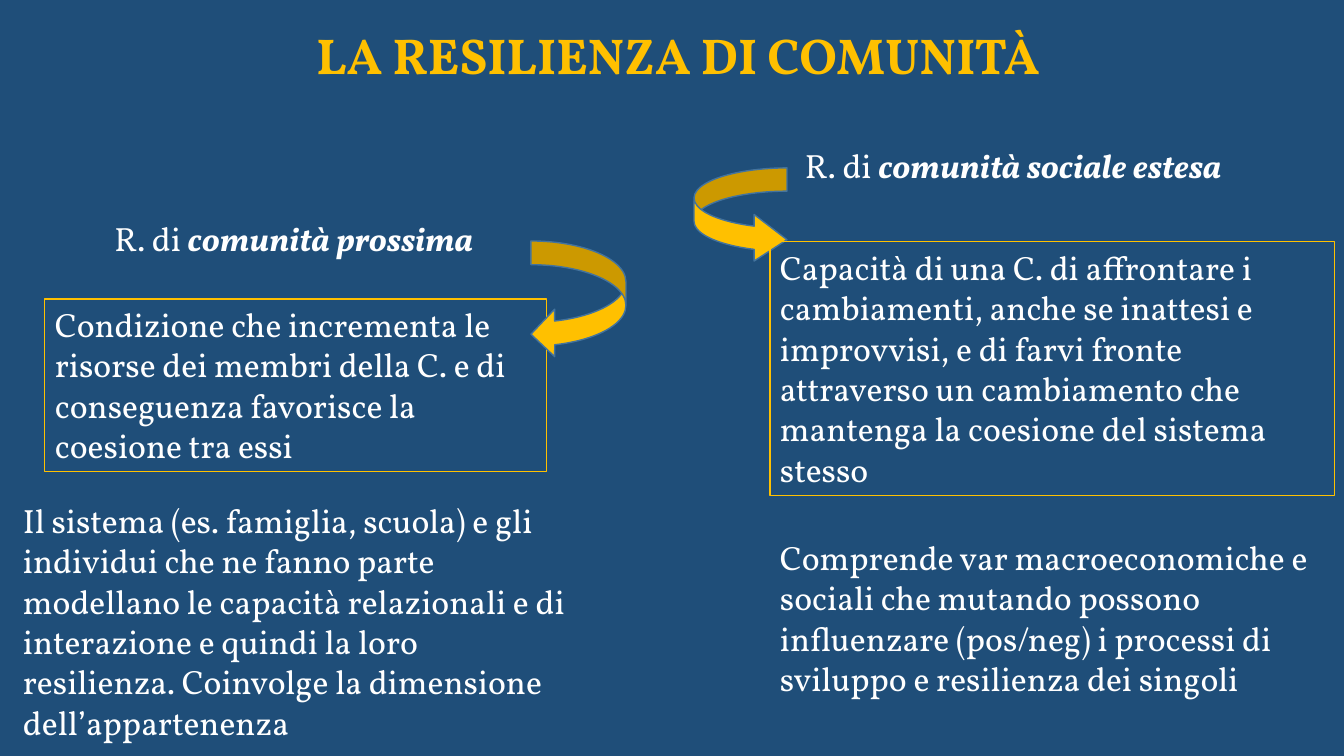
import pptx
import pptx.util
import pptx.dml.color
import pptx.enum.shapes
import pptx.enum.text

EMU_PER_PX = 914400 / 100.8
GOLD, WHITE, NAVY, STEEL = "FFC000", "FFFFFF", "1F4E79", "43739E"
SHAPES = pptx.enum.shapes.MSO_SHAPE
ALIGN = pptx.enum.text.PP_ALIGN


def px(length):
    return pptx.util.Emu(round(length * EMU_PER_PX))


def rgb(hex_colour):
    return pptx.dml.color.RGBColor.from_string(hex_colour)


def write(paragraph, text, size=24, colour=WHITE, bold=False, italic=False):
    run = paragraph.add_run()
    run.text = text
    run.font.name = "Vollkorn"
    run.font.size = pptx.util.Pt(size)
    run.font.color.rgb = rgb(colour)
    run.font.bold = bold
    run.font.italic = italic


class ResilienceSlide:
    def __init__(self, deck):
        title_only = deck.slide_layouts[5]
        self.slide = deck.slides.add_slide(title_only)
        background = self.slide.background.fill
        background.solid()
        background.fore_color.rgb = rgb(NAVY)

    def paragraph(self, holder, align):
        """Fit the holder to wrapped, top-anchored text and return its paragraph."""
        frame = holder.text_frame
        frame.word_wrap = True
        frame.auto_size = pptx.enum.text.MSO_AUTO_SIZE.SHAPE_TO_FIT_TEXT
        frame.vertical_anchor = pptx.enum.text.MSO_ANCHOR.TOP
        frame.paragraphs[0].alignment = align
        return frame.paragraphs[0]

    def title(self, text, left, top, width, height):
        heading = self.slide.shapes.title
        heading.left, heading.top = px(left), px(top)
        heading.width, heading.height = px(width), px(height)
        write(self.paragraph(heading, ALIGN.CENTER), text,
              size=36, colour=GOLD, bold=True)

    def text(self, content, area, emphasis="", align=ALIGN.LEFT):
        label = self.slide.shapes.add_textbox(*map(px, area))
        paragraph = self.paragraph(label, align)
        write(paragraph, content)
        if emphasis:
            write(paragraph, emphasis, bold=True, italic=True)

    def shape(self, preset, area, line, line_width):
        shape = self.slide.shapes.add_shape(preset, *map(px, area))
        shape.shadow.inherit = False
        shape.line.color.rgb = rgb(line)
        shape.line.width = pptx.util.Pt(line_width)
        return shape

    def definition(self, content, area):
        frame = self.shape(SHAPES.RECTANGLE, area, GOLD, 0.75)
        frame.fill.background()
        write(self.paragraph(frame, ALIGN.LEFT), content)

    def arrow(self, preset, area, head_length=0.25):
        arrow = self.shape(preset, area, STEEL, 1)
        arrow.fill.solid()
        arrow.fill.fore_color.rgb = rgb(GOLD)
        arrow.adjustments[2] = head_length


def main():
    deck = pptx.Presentation()
    deck.slide_width, deck.slide_height = px(1344), px(756)
    page = ResilienceSlide(deck)

    page.arrow(SHAPES.CURVED_RIGHT_ARROW, (694, 168, 93, 95), head_length=0.353)
    page.title("LA RESILIENZA DI COMUNITÀ", 167, 19, 1022, 72)

    page.text("R. di ", (67, 213, 460, 50),
              emphasis="comunità prossima ", align=ALIGN.CENTER)
    page.text("Il sistema (es. famiglia, scuola) e gli individui che ne fanno "
              "parte modellano le capacità relazionali e di interazione e quindi "
              "la loro resilienza. Coinvolge la dimensione dell’appartenenza",
              (13, 495, 565, 254))

    page.text("R. di ", (795, 140, 515, 50), emphasis="comunità sociale estesa")
    page.text("Comprende var macroeconomiche e sociali che mutando possono "
              "influenzare (pos/neg) i processi di sviluppo e resilienza dei "
              "singoli", (770, 532, 565, 173))

    page.definition("Capacità di una C. di affrontare i cambiamenti, anche se "
                    "inattesi e improvvisi, e di farvi fronte attraverso un "
                    "cambiamento che mantenga la coesione del sistema stesso",
                    (770, 242, 565, 254))
    page.definition("Condizione che incrementa le risorse dei membri della C. e "
                    "di conseguenza favorisce la coesione tra essi",
                    (45, 299, 502, 173))
    page.arrow(SHAPES.CURVED_LEFT_ARROW, (531, 241, 95, 117))

    deck.save("out.pptx")


if __name__ == "__main__":
    main()
